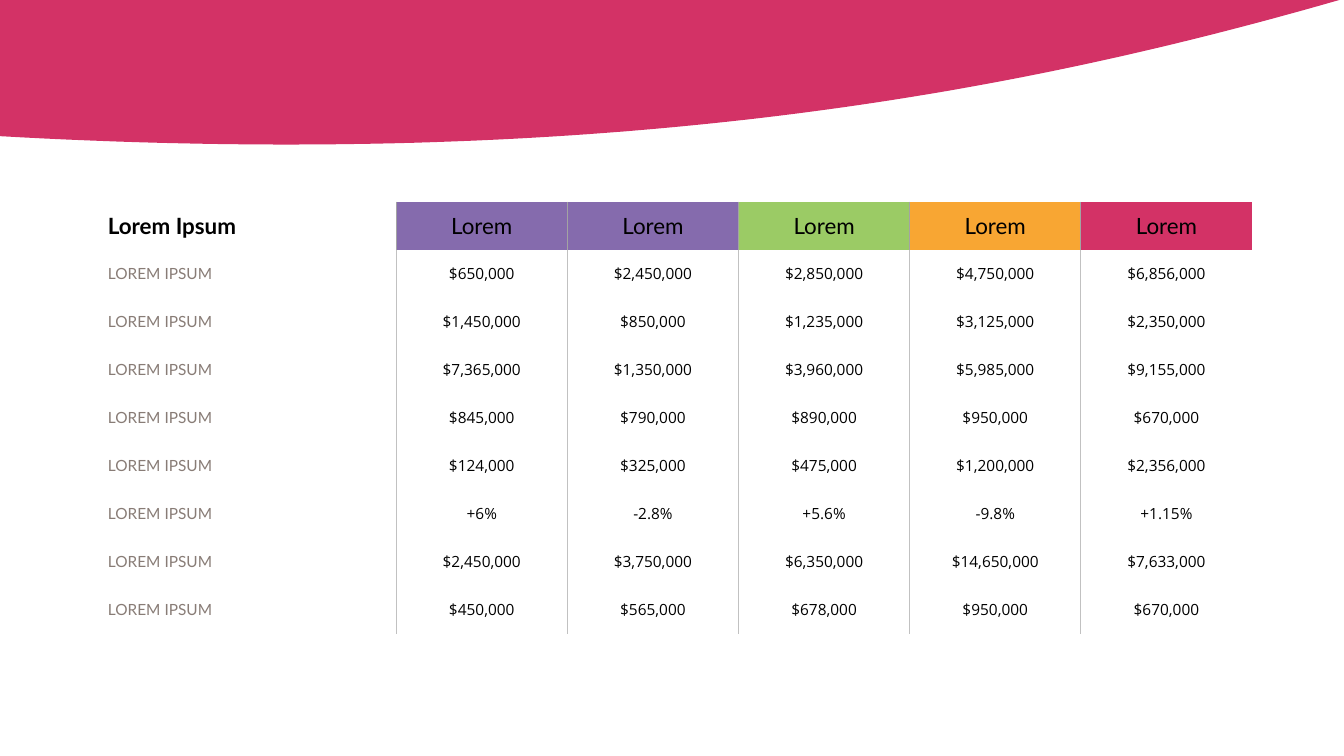
from dataclasses import dataclass

from lxml import etree
from pptx import Presentation
from pptx.dml.color import RGBColor
from pptx.enum.text import MSO_ANCHOR, PP_ALIGN
from pptx.oxml.ns import qn
from pptx.util import Inches, Pt

MIDDLE = MSO_ANCHOR.MIDDLE
LEFT, CENTER = PP_ALIGN.LEFT, PP_ALIGN.CENTER

# Content
HEADER = ["Lorem Ipsum"] + ["Lorem"] * 5
ROW_LABEL = "LOREM IPSUM"
FIGURES = [
    ["$650,000", "$2,450,000", "$2,850,000", "$4,750,000", "$6,856,000"],
    ["$1,450,000", "$850,000", "$1,235,000", "$3,125,000", "$2,350,000"],
    ["$7,365,000", "$1,350,000", "$3,960,000", "$5,985,000", "$9,155,000"],
    ["$845,000", "$790,000", "$890,000", "$950,000", "$670,000"],
    ["$124,000", "$325,000", "$475,000", "$1,200,000", "$2,356,000"],
    ["+6%", "-2.8%", "+5.6%", "-9.8%", "+1.15%"],
    ["$2,450,000", "$3,750,000", "$6,350,000", "$14,650,000", "$7,633,000"],
    ["$450,000", "$565,000", "$678,000", "$950,000", "$670,000"],
]
ROWS = [HEADER] + [[ROW_LABEL] + figures for figures in FIGURES]


@dataclass(frozen=True)
class Theme:
    white: str = "FFFFFF"
    text: str = "000000"
    label: str = "887C76"
    banner: str = "D33266"
    header_fills: tuple = ("FFFFFF", "856BAD", "856BAD", "9BCB65", "F8A633", "D33266")
    header_rule: str = "A3A3A3"
    body_rule: str = "C1C1C1"
    heading_font: str = "Lato"
    figure_font: str = "Open Sans"
    header_size: float = 16
    body_size: float = 11
    rule_width: float = 0.75


THEME = Theme()

# Layout, in inches
TABLE_LEFT, TABLE_TOP, TABLE_WIDTH, TABLE_HEIGHT = 0.92, 2, 11.5, 4.29
LABEL_WIDTH = 3.01
BANNER_LEFT, BANNER_TOP = -0.02, -0.01
BANNER_CURVE = [(13.32, -0.01), (10.33, 0.85), (6.29, 1.71), (-0.02, 1.35)]
CURVE_STEPS = 80


def curve_point(t):
    """Point at t on the cubic curve along the banner's lower edge."""
    weights = [(1 - t) ** 3, 3 * t * (1 - t) ** 2, 3 * t ** 2 * (1 - t), t ** 3]
    return tuple(
        Inches(sum(w * point[axis] for w, point in zip(weights, BANNER_CURVE)))
        for axis in (0, 1)
    )


def add_banner(page):
    edge = [curve_point(step / CURVE_STEPS) for step in range(CURVE_STEPS + 1)]
    builder = page.shapes.build_freeform(Inches(BANNER_LEFT), Inches(BANNER_TOP))
    builder.add_line_segments(edge, close=True)
    banner = builder.convert_to_shape()
    banner.shadow.inherit = False
    banner.fill.solid()
    banner.fill.fore_color.rgb = RGBColor.from_string(THEME.banner)
    banner.line.fill.background()


def set_borders(cell, color, ruled_sides):
    properties = cell._tc.get_or_add_tcPr()
    for side in "LRTB":
        border = etree.SubElement(properties, qn(f"a:ln{side}"), w=str(Pt(THEME.rule_width)))
        if side in ruled_sides:
            fill = etree.SubElement(border, qn("a:solidFill"))
            etree.SubElement(fill, qn("a:srgbClr"), val=color)
        else:
            etree.SubElement(border, qn("a:noFill"))


def fill_cell(cell, text, row, column):
    is_header, is_label = row == 0, column == 0

    # Rules run only between columns
    sides = ("" if is_label else "L") + ("" if column == len(HEADER) - 1 else "R")
    set_borders(cell, THEME.header_rule if is_header else THEME.body_rule, sides)
    cell.fill.solid()
    fill_color = THEME.header_fills[column] if is_header else THEME.white
    cell.fill.fore_color.rgb = RGBColor.from_string(fill_color)

    cell.vertical_anchor = MIDDLE
    cell.margin_left = Inches(0.15 if is_label else 0.05)
    cell.margin_right = Inches(0.05)
    cell.margin_top = cell.margin_bottom = Inches(0.03)

    cell.text_frame.text = text
    para = cell.text_frame.paragraphs[0]
    para.alignment = LEFT if is_label else CENTER
    font = para.runs[0].font
    font.name = THEME.heading_font if is_header or is_label else THEME.figure_font
    font.size = Pt(THEME.header_size if is_header else THEME.body_size)
    font.bold = is_header and is_label
    text_color = THEME.label if is_label and not is_header else THEME.text
    font.color.rgb = RGBColor.from_string(text_color)


def add_figures_table(page):
    frame = page.shapes.add_table(
        len(ROWS), len(HEADER), Inches(TABLE_LEFT), Inches(TABLE_TOP),
        Inches(TABLE_WIDTH), Inches(TABLE_HEIGHT),
    )
    table = frame.table
    table.first_row = table.horz_banding = False
    figure_width = (TABLE_WIDTH - LABEL_WIDTH) / (len(HEADER) - 1)
    for column, table_column in enumerate(table.columns):
        table_column.width = Inches(figure_width if column else LABEL_WIDTH)
    for row, texts in enumerate(ROWS):
        table.rows[row].height = Inches(TABLE_HEIGHT / len(ROWS))
        for column, text in enumerate(texts):
            fill_cell(table.cell(row, column), text, row, column)


def main():
    deck = Presentation()
    deck.slide_width, deck.slide_height = Inches(13.33), Inches(7.5)
    page = deck.slides.add_slide(deck.slide_layouts[6])
    add_banner(page)
    add_figures_table(page)
    deck.save("out.pptx")


if __name__ == "__main__":
    main()
